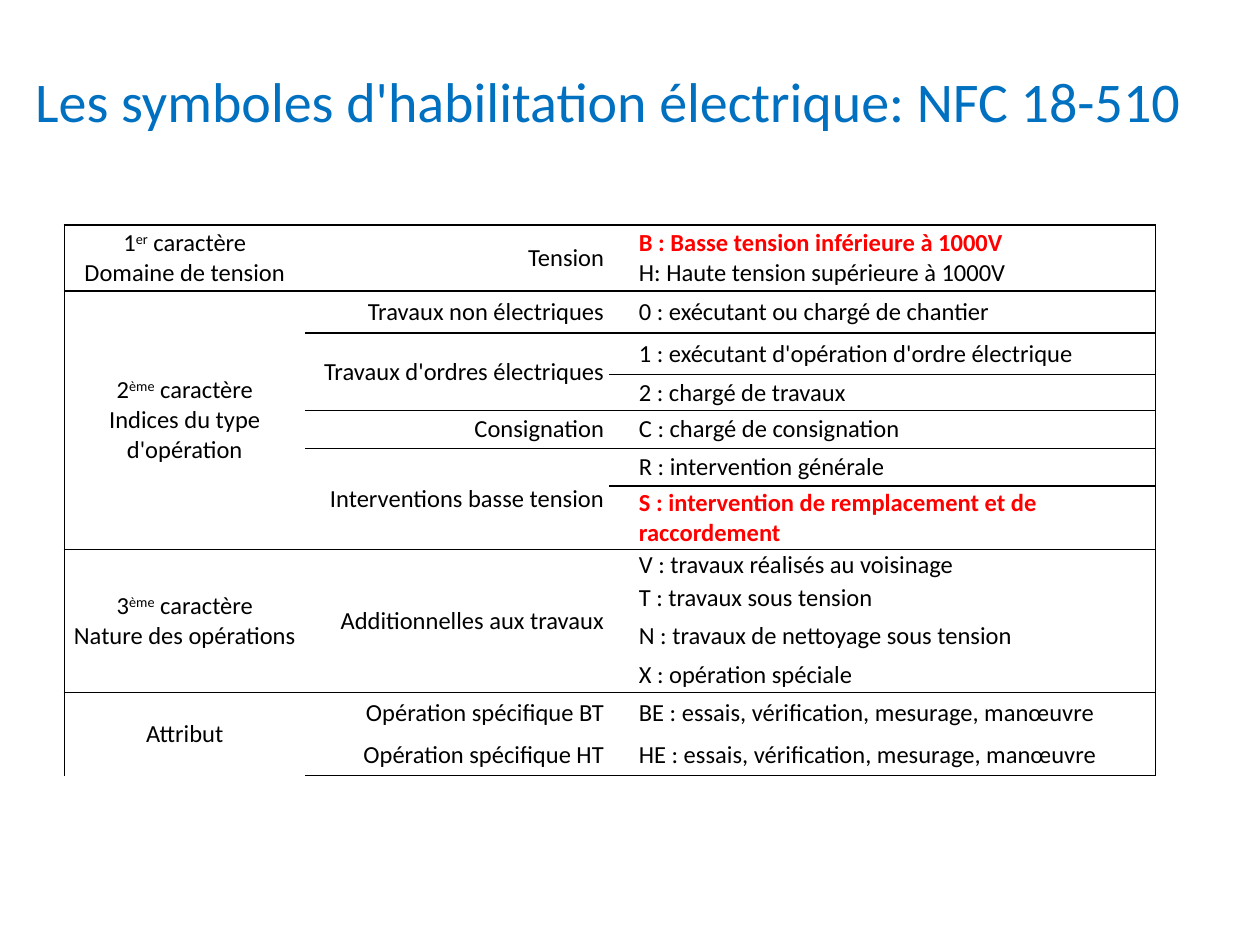
from lxml.etree import SubElement
from pptx import Presentation
from pptx.dml.color import RGBColor
from pptx.enum.text import MSO_ANCHOR, MSO_AUTO_SIZE, PP_ALIGN
from pptx.oxml.ns import qn
from pptx.util import Cm, Pt

TITLE = "Les symboles d'habilitation électrique: NFC 18-510"
COLORS = {"title": "0070C0", "text": "000000", "accent": "FF0000", "line": "000000"}
FONT = "Calibri"
NO_STYLE = "{2D5ABB26-0587-4C30-8999-92F81FD0307C}"
HIGHLIGHTS = ("B :", "S :")

CHARACTERS = [
    (1, ["1^er^ caractère\nDomaine de tension"]),
    (6, ["2^ème^ caractère\nIndices du type d'opération"]),
    (4, ["3^ème^ caractère\nNature des opérations"]),
    (2, ["Attribut"]),
]
OPERATIONS = [
    (1, ["Tension"]),
    (1, ["Travaux non électriques"]),
    (2, ["Travaux d'ordres électriques"]),
    (1, ["Consignation"]),
    (2, ["Interventions basse tension"]),
    (4, ["Additionnelles aux travaux"]),
    (2, ["Opération spécifique BT", "Opération spécifique HT"]),
]
SYMBOLS = [
    (1, ["B : Basse tension inférieure à 1000V\nH: Haute tension supérieure à 1000V"]),
    (1, ["0 : exécutant ou chargé de chantier"]),
    (1, ["1 : exécutant d'opération d'ordre électrique"]),
    (1, ["2 : chargé de travaux"]),
    (1, ["C : chargé de consignation"]),
    (1, ["R : intervention générale"]),
    (1, ["S : intervention de remplacement et de raccordement"]),
    (4, ["V : travaux réalisés au voisinage", "T : travaux sous tension",
         "N : travaux de nettoyage sous tension", "X : opération spéciale"]),
    (2, ["BE : essais, vérification, mesurage, manœuvre",
         "HE : essais, vérification, mesurage, manœuvre"]),
]
COLUMNS = [
    {"width": 4.85, "align": PP_ALIGN.CENTER, "indent": 0.1, "blocks": CHARACTERS},
    {"width": 6.13, "align": PP_ALIGN.RIGHT, "indent": 0.1, "blocks": OPERATIONS},
    {"width": 11.01, "align": PP_ALIGN.LEFT, "indent": 0.6, "blocks": SYMBOLS},
]
ROW_HEIGHTS = [2.03, 1.33, 0.84, 0.84, 0.73, 0.76, 0.76, 1.28,
               0.64, 0.69, 0.84, 0.71, 0.84, 0.84]


def apply(target, values):
    for name, value in values.items():
        setattr(target, name, value)


def style_font(font, size, color, bold=False):
    apply(font, {"name": FONT, "size": Pt(size), "bold": bold})
    font.color.rgb = RGBColor.from_string(COLORS[color])


def set_borders(cell, sides):
    properties = cell._tc.get_or_add_tcPr()
    for side in "LRTB":
        line = SubElement(properties, qn(f"a:ln{side}"), w=str(Pt(1)))
        if side in sides:
            fill = SubElement(line, qn("a:solidFill"))
            SubElement(fill, qn("a:srgbClr"), val=COLORS["line"])
        else:
            SubElement(line, qn("a:noFill"))
    cell.fill.background()


def write_cell(cell, text, column):
    apply(cell, {"vertical_anchor": MSO_ANCHOR.MIDDLE, "margin_left": Cm(column["indent"]),
                 "margin_right": Cm(0.1), "margin_top": 0, "margin_bottom": 0})
    for index, line in enumerate(text.split("\n")):
        frame = cell.text_frame
        para = frame.add_paragraph() if index else frame.paragraphs[0]
        para.alignment = column["align"]
        marked = line.startswith(HIGHLIGHTS)
        for position, part in enumerate(line.split("^")):
            span = para.add_run()
            span.text = part
            style_font(span.font, 14, "accent" if marked else "text", marked)
            if position % 2:
                span._r.get_or_add_rPr().set("baseline", "30000")


def fill_column(table, number, column):
    outer = {0: "L", len(COLUMNS) - 1: "R"}.get(number, "")
    start = 1
    for count, texts in column["blocks"]:
        last = start + count - 1
        for row in range(start, last + 1):
            sides = outer + "T" * (row == start) + "B" * (row == last)
            set_borders(table.cell(row, number), sides)
        if len(texts) < count:
            table.cell(start, number).merge(table.cell(last, number))
        for offset, text in enumerate(texts):
            write_cell(table.cell(start + offset, number), text, column)
        start = last + 1


def add_symbol_table(page):
    widths = [column["width"] for column in COLUMNS]
    frame = page.shapes.add_table(len(ROW_HEIGHTS), len(COLUMNS), Cm(1.3), Cm(2.51),
                                  Cm(sum(widths)), Cm(sum(ROW_HEIGHTS)))
    table = frame.table
    apply(table, {"first_row": False, "horz_banding": False})
    table._tbl.tblPr.find(qn("a:tableStyleId")).text = NO_STYLE
    for row, height in zip(table.rows, ROW_HEIGHTS):
        row.height = Cm(height)
    for number, column in enumerate(COLUMNS):
        table.columns[number].width = Cm(column["width"])
        set_borders(table.cell(0, number), "B")
        fill_column(table, number, column)
    table.cell(0, 0).merge(table.cell(0, len(COLUMNS) - 1))


def add_title(page):
    title = page.shapes.title
    apply(title, {"left": Cm(0.43), "top": Cm(1.2), "width": Cm(23.67), "height": Cm(1.63)})
    apply(title.text_frame, {"text": TITLE, "word_wrap": True, "auto_size": MSO_AUTO_SIZE.NONE,
                             "vertical_anchor": MSO_ANCHOR.MIDDLE,
                             "margin_left": 0, "margin_right": 0})
    para = title.text_frame.paragraphs[0]
    para.alignment = PP_ALIGN.CENTER
    style_font(para.runs[0].font, 32, "title")


def main():
    deck = Presentation()
    apply(deck, {"slide_width": Cm(25.4), "slide_height": Cm(19.05)})
    page = deck.slides.add_slide(deck.slide_layouts[5])
    add_symbol_table(page)
    add_title(page)
    deck.save("out.pptx")


if __name__ == "__main__":
    main()
